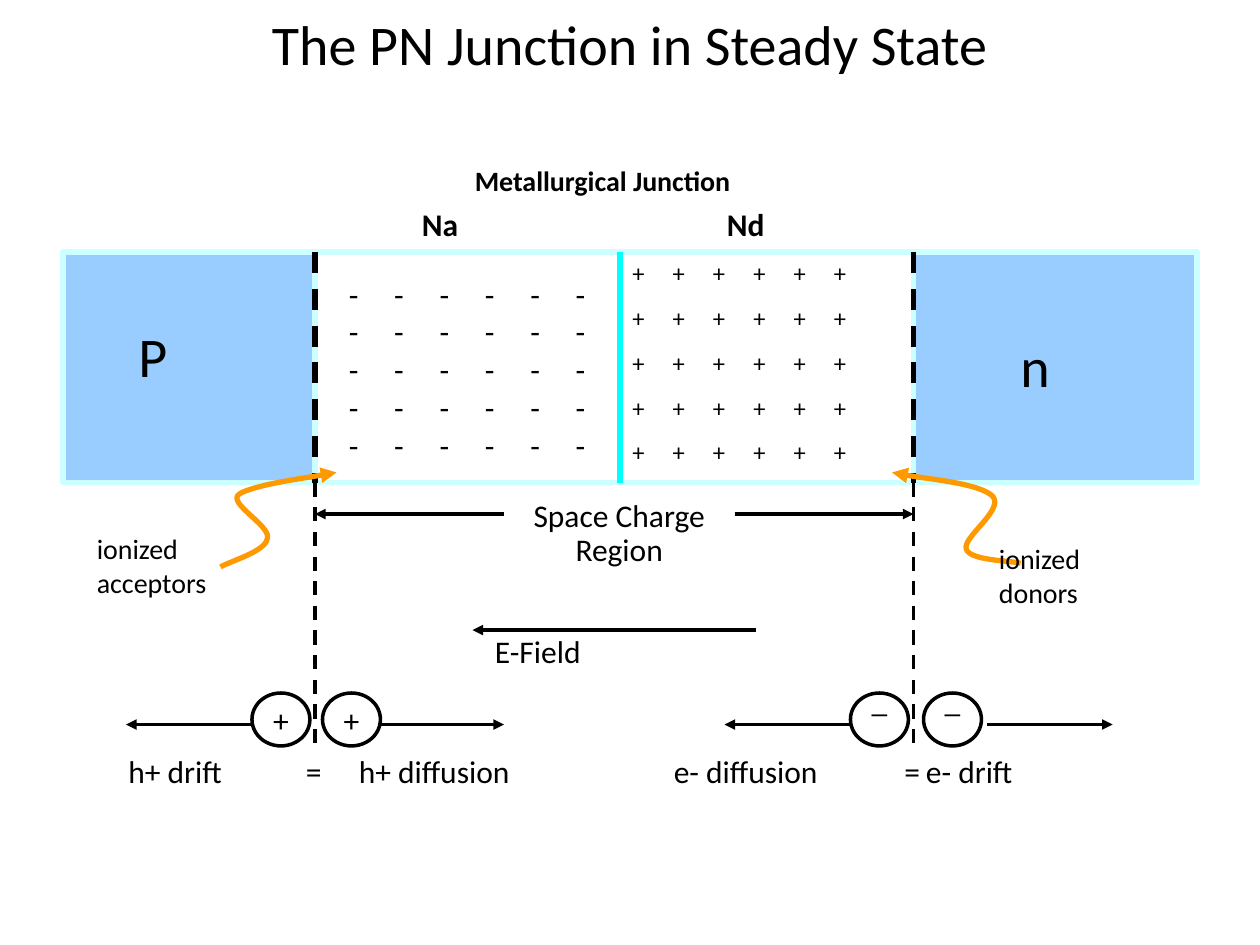
import pptx
import pptx.dml.color
import pptx.enum.dml
import pptx.enum.shapes
import pptx.enum.text
import pptx.oxml
import pptx.oxml.ns
import pptx.util

Inches = pptx.util.Inches
Pt = pptx.util.Pt
SHAPE = pptx.enum.shapes.MSO_SHAPE
STRAIGHT = pptx.enum.shapes.MSO_CONNECTOR.STRAIGHT
DASH = pptx.enum.dml.MSO_LINE.DASH
ANCHOR = pptx.enum.text.MSO_ANCHOR
CENTER = pptx.enum.text.PP_ALIGN.CENTER
NS = pptx.oxml.ns.nsdecls("a")

THEME = {
    "font": "Calibri",
    "ink": "000000", "bulk": "99CCFF", "depleted": "FFFFFF",
    "edge": "CCFFFF", "junction": "00FFFF", "pointer": "FF9900",
    "title": 32, "label": 18, "note": 16, "plus": 14,
    "thin": 2, "thick": 3,
}


def write(sp, lines, size="label", bold=None, tab=None, frame=None, **para):
    tf = sp.text_frame
    for name, value in ({"word_wrap": True} | (frame or {})).items():
        setattr(tf, name, value)
    for i, line in enumerate(lines):
        p = tf.paragraphs[0] if i == 0 else tf.add_paragraph()
        for name, value in para.items():
            setattr(p, name, value)
        if tab:
            stops = "".join(f'<a:tab pos="{Inches(tab * n)}" algn="l"/>' for n in range(1, 6))
            p._p.get_or_add_pPr().append(pptx.oxml.parse_xml(f"<a:tabLst {NS}>{stops}</a:tabLst>"))
        r = p.add_run()
        r.text = line
        for name, value in {"name": THEME["font"], "size": Pt(THEME[size]), "bold": bold}.items():
            setattr(r.font, name, value)
        r.font.color.rgb = pptx.dml.color.RGBColor.from_string(THEME["ink"])


def outline(sp, color="ink", width="thin", dash=None, arrow=False):
    sp.line.color.rgb = pptx.dml.color.RGBColor.from_string(THEME[color])
    for name, value in {"width": Pt(THEME[width]), "dash_style": dash}.items():
        setattr(sp.line, name, value)
    if arrow:
        sp.line._get_or_add_ln().append(pptx.oxml.parse_xml(f'<a:tailEnd {NS} type="triangle"/>'))
    if not sp._element.spPr.findall(pptx.oxml.ns.qn("a:effectLst")):
        sp._element.spPr.append(pptx.oxml.parse_xml(f"<a:effectLst {NS}/>"))


prs = pptx.Presentation()
prs.slide_width, prs.slide_height = Inches(10), Inches(7.5)
s = prs.slides.add_slide(prs.slide_layouts[6])

left, p_edge, junction, n_edge, right = 0.5, 2.5, 4.92, 7.25, 9.5
top, bottom, foot = 2, 3.83, 5.92

regions = [(left, p_edge, "bulk"), (p_edge, junction, "depleted"),
           (junction, n_edge, "depleted"), (n_edge, right, "bulk")]
for x1, x2, fill in regions:
    sp = s.shapes.add_shape(SHAPE.RECTANGLE, Inches(x1), Inches(top), Inches(x2 - x1), Inches(bottom - top))
    sp.shadow.inherit = False
    sp.fill.solid()
    sp.fill.fore_color.rgb = pptx.dml.color.RGBColor.from_string(THEME[fill])
    outline(sp, "edge", "thick")

lines = [(junction, top, junction, bottom, {"color": "junction", "width": "thick"})]
for x in (p_edge, n_edge):
    lines.append((x, top, x, bottom, {"width": "thick", "dash": DASH}))
    lines.append((x, bottom, x, foot, {"dash": DASH}))
for x1, x2, y in [(4, p_edge, 4.08), (5.83, n_edge, 4.08), (6, 3.75, 5),
                  (3, 4, 5.75), (7.83, 8.83, 5.75), (6.75, 5.75, 5.75), (2, 1, 5.75)]:
    lines.append((x1, y, x2, y, {"arrow": True}))
for x1, y1, x2, y2, style in lines:
    sp = s.shapes.add_connector(STRAIGHT, Inches(x1), Inches(y1), Inches(x2), Inches(y2))
    outline(sp, **style)

pointers = [
    [(1.75, 4.5), (1.81, 4.46), (2.1, 4.38), (2.12, 4.28), (2.17, 4.18),
     (1.79, 3.99), (1.9, 3.92), (2.02, 3.85), (2.51, 3.78), (2.67, 3.75)],
    [(8.1, 4.47), (8.03, 4.45), (7.7, 4.45), (7.67, 4.36), (7.63, 4.27),
     (7.97, 4.05), (7.88, 3.94), (7.78, 3.84), (7.25, 3.79), (7.08, 3.75)],
]
for points in pointers:
    points = [(Inches(x), Inches(y)) for x, y in points]
    fb = s.shapes.build_freeform(*points[0])
    fb.add_line_segments(points[1:], close=False)
    sp = fb.convert_to_shape()
    sp.shadow.inherit = False
    sp.fill.background()
    outline(sp, "pointer", "thick", arrow=True)
    segments = list(sp._element.iter(pptx.oxml.ns.qn("a:lnTo")))
    for i in range(0, len(segments), 3):
        curve = pptx.oxml.parse_xml(f"<a:cubicBezTo {NS}/>")
        segments[i].addprevious(curve)
        for segment in segments[i:i + 3]:
            curve.append(segment[0])
            segment.getparent().remove(segment)

plus_frame = {"vertical_anchor": ANCHOR.MIDDLE, "word_wrap": False}
minus_frame = {"vertical_anchor": ANCHOR.TOP, "word_wrap": False, "margin_top": Inches(-0.16)}
for x, sign, frame in [(2.56, "+", plus_frame), (2, "+", plus_frame),
                       (6.75, "_", minus_frame), (7.33, "_", minus_frame)]:
    sp = s.shapes.add_shape(SHAPE.OVAL, Inches(x), Inches(5.5), Inches(0.46), Inches(0.42))
    sp.shadow.inherit = False
    sp.fill.background()
    outline(sp)
    write(sp, [sign], frame=frame, alignment=CENTER)

labels = [
    (1, 0.03, 8, 0.63, ["The PN Junction in Steady State"], {"size": "title", "alignment": CENTER}),
    (3.67, 1.25, 2.42, 0.37, ["Metallurgical Junction"], {"size": "note", "bold": True}),
    (3.25, 1.58, 0.92, 0.4, ["Na"], {"bold": True}),
    (5.67, 1.58, 0.92, 0.4, ["Nd"], {"bold": True}),
    (1, 2.5, 0.92, 0.63, ["P"], {"size": "title"}),
    (8, 2.58, 0.92, 0.63, ["n"], {"size": "title"}),
    (2.67, 2.13, 2.25, 1.62, ["\t".join("-" * 6)] * 5, {"tab": 0.36}),
    (4.92, 2, 2.25, 1.87, ["\t".join("+" * 6)] * 5,
     {"size": "plus", "tab": 0.32, "space_before": Pt(8.8)}),
    (3.83, 3.92, 2.17, 0.64, ["Space Charge Region"], {"alignment": CENTER, "line_spacing": 0.9}),
    (0.67, 4.17, 1.42, 0.64, ["ionized acceptors"], {"size": "note"}),
    (7.83, 4.25, 1.42, 0.64, ["ionized donors"], {"size": "note"}),
    (3.83, 5, 2.17, 0.37, ["E-Field"], {"line_spacing": 0.9}),
    (0.92, foot, 1.58, 0.4, ["h+ drift"], {}),
    (2.33, foot, 0.33, 0.4, ["="], {}),
    (2.75, foot, 1.83, 0.4, ["h+ diffusion"], {}),
    (5.25, foot, 1.83, 0.4, ["e- diffusion"], {}),
    (7.08, foot, 0.33, 0.4, ["="], {}),
    (7.25, foot, 1.58, 0.4, ["e- drift"], {}),
]
for x, y, w, h, text, style in labels:
    sp = s.shapes.add_textbox(Inches(x), Inches(y), Inches(w), Inches(h))
    write(sp, text, **style)

prs.save("out.pptx")
